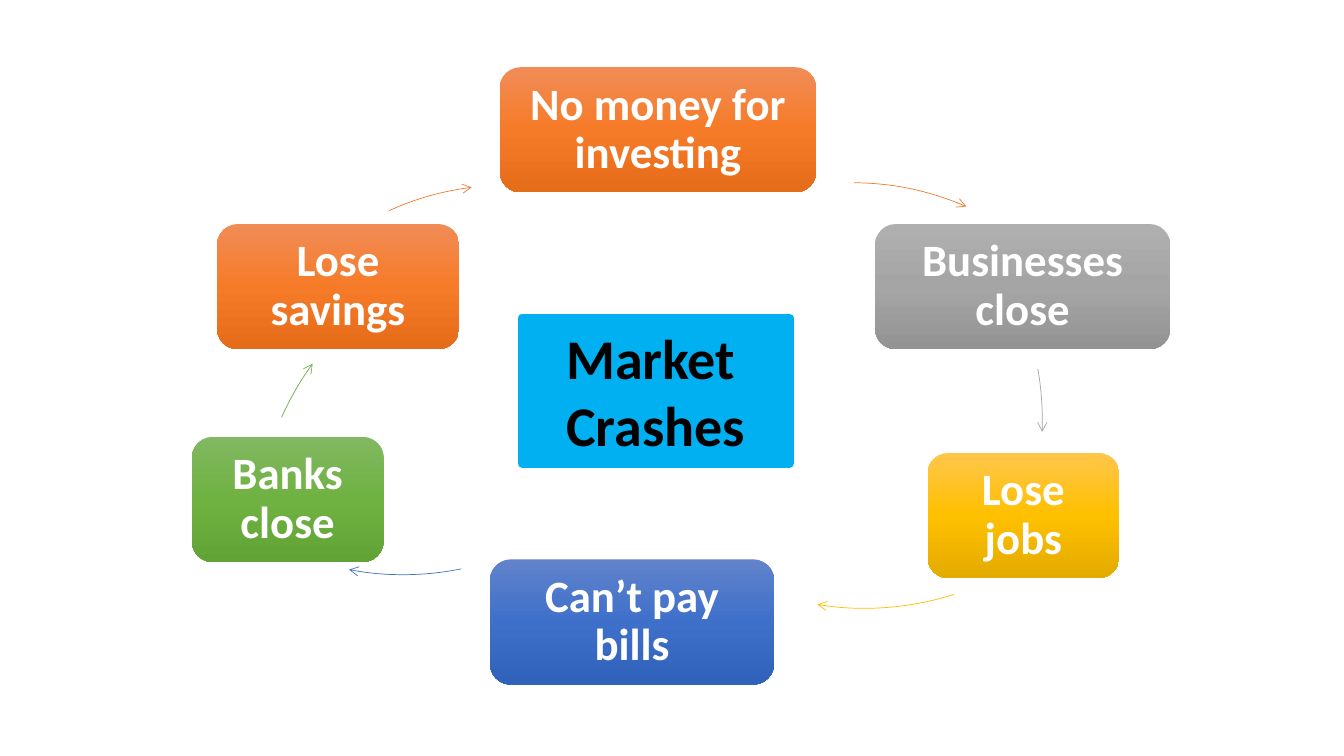
from copy import deepcopy

from lxml import etree
from pptx import Presentation
from pptx.dml.color import RGBColor
from pptx.enum.shapes import MSO_SHAPE
from pptx.enum.text import MSO_ANCHOR, PP_ALIGN
from pptx.oxml.ns import qn
from pptx.util import Pt

ROUND, RECT, ARC = MSO_SHAPE.ROUNDED_RECTANGLE, MSO_SHAPE.RECTANGLE, MSO_SHAPE.ARC
LEFT, CENTER = PP_ALIGN.LEFT, PP_ALIGN.CENTER
MIDDLE = MSO_ANCHOR.MIDDLE
FONT = "Calibri"
HIGH = 89.5  # height of every step
RING = 420  # diameter of the circle behind every arrow

ORANGE = ("F18C57", "F67B28", "E56C19")
GRAY = ("AFAFAF", "A5A5A5", "939393")
GOLD = ("FFC64B", "FFC000", "E3AB00")
BLUE = ("6183CB", "3E70CA", "3062BB")
GREEN = ("81B861", "6FB242", "62A336")

# text, left, top, width, gradient
STEPS = [
    ("No money for investing", 357, 48, 226, ORANGE),
    ("Businesses close", 625, 160, 211, GRAY),
    ("Lose jobs", 662.5, 323.5, 137, GOLD),
    ("Can’t pay bills", 350, 399.5, 203, BLUE),
    ("Banks close", 137, 312, 137, GREEN),
    ("Lose savings", 155, 160, 173, ORANGE),
]

# left, top of the circle, start and end in degrees, colour
ARROWS = [
    (397.5, 130.5, 270.7, 293.2, "ED7D31"),
    (324.5, 90, 350, 2.3, "A5A5A5"),
    (407.5, 14.5, 72.3, 99.2, "FFC000"),
    (78, -9.5, 78.6, 100.6, "4472C4"),
    (183, 173.5, 204, 216.1, "70AD47"),
    (154, 132, 245.8, 262.6, "ED7D31"),
]


def color(code):
    return RGBColor.from_string(code)


def add_shape(slide, kind, left, top, width, height):
    shape = slide.shapes.add_shape(kind, Pt(left), Pt(top), Pt(width), Pt(height))
    shape.shadow.inherit = False
    return shape


def shade(shape, codes):
    """Fill from top to bottom with three evenly spaced colours."""
    fill = shape.fill
    fill.gradient()
    fill.gradient_angle = 270
    stops = shape.element.spPr.find(".//" + qn("a:gsLst"))
    stops.insert(1, deepcopy(stops[0]))
    for i, (stop, code) in enumerate(zip(fill.gradient_stops, codes)):
        stop.position = i / 2
        stop.color.rgb = color(code)


def write(shape, text, size, code, align, pads):
    """Set the text; pads are the left, top, right and bottom insets."""
    frame = shape.text_frame
    frame.word_wrap = True
    frame.vertical_anchor = MIDDLE
    (frame.margin_left, frame.margin_top,
     frame.margin_right, frame.margin_bottom) = map(Pt, pads)
    para = frame.paragraphs[0]
    para.alignment = align
    run = para.add_run()
    run.text = text
    font = run.font
    font.name, font.size, font.bold = FONT, Pt(size), True
    font.color.rgb = color(code)
    return para


def add_step(slide, text, left, top, width, codes):
    box = add_shape(slide, ROUND, left, top, width, HIGH)
    shade(box, codes)
    box.line.fill.background()
    para = write(box, text, 32, "FFFFFF", CENTER, [9.6] * 4)
    para.line_spacing = 0.9


def add_arrow(slide, left, top, start, end, code):
    arc = add_shape(slide, ARC, left, top, RING, RING)
    # An angle is stored in 60000ths of a degree, an adjustment in 100000ths
    arc.adjustments[0] = start * 0.6
    arc.adjustments[1] = end * 0.6
    arc.fill.background()
    arc.line.color.rgb = color(code)
    arc.line.width = Pt(0.5)
    line = arc.element.spPr.find(qn("a:ln"))
    etree.SubElement(line, qn("a:tailEnd"), type="arrow")


def add_hub(slide, text, code):
    hub = add_shape(slide, RECT, 373, 227, 191, 104)
    hub.fill.solid()
    hub.fill.fore_color.rgb = color(code)
    hub.line.color.rgb = color(code)
    hub.line.width = Pt(6)
    write(hub, text, 40, "000000", LEFT, (31.5, 3.6, 7.2, 3.6))


def main():
    deck = Presentation()
    deck.slide_width, deck.slide_height = Pt(960), Pt(540)
    slide = deck.slides.add_slide(deck.slide_layouts[6])
    for step, arrow in zip(STEPS, ARROWS):
        add_step(slide, *step)
        add_arrow(slide, *arrow)
    add_hub(slide, "Market Crashes", "00B0F0")
    deck.save("out.pptx")


if __name__ == "__main__":
    main()
